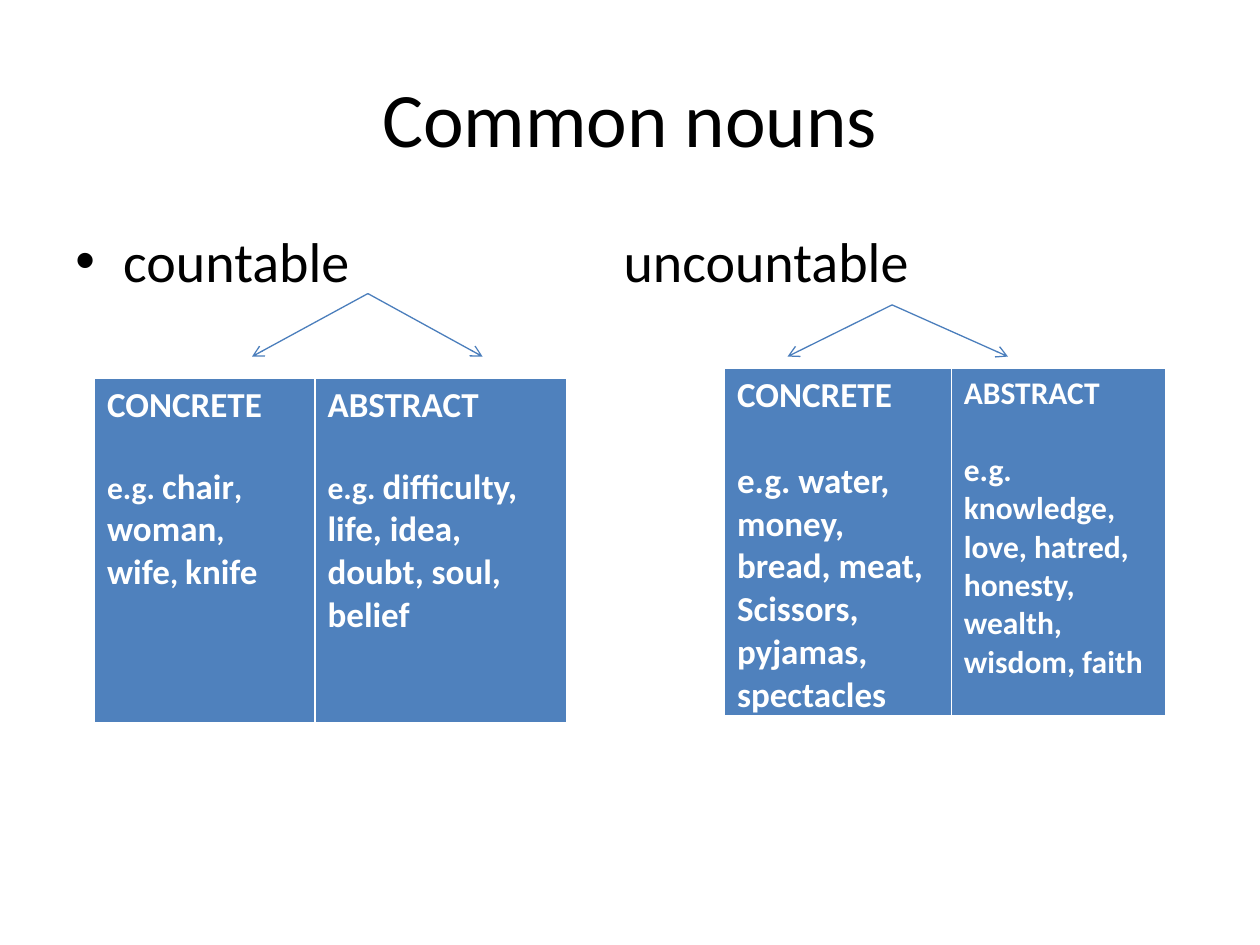
from dataclasses import dataclass

from lxml import etree
from pptx import Presentation
from pptx import util as u
from pptx.dml.color import RGBColor
from pptx.enum import shapes, text
from pptx.oxml.ns import qn


@dataclass(frozen=True)
class Theme:
    font: str = "Calibri"
    ink: str = "000000"
    paper: str = "FFFFFF"
    cell: str = "4F81BD"
    arrow: str = "4B7EBC"
    title: int = 44
    body: int = 32
    large: int = 20
    small: int = 18


THEME = Theme()


def write(para, content, *, size, color, bold=False, align=None, before=0):
    para.alignment = align
    para.space_before = u.Pt(before)
    span = para.add_run()
    span.text = content
    span.font.name = THEME.font
    span.font.size = u.Pt(size)
    span.font.bold = bold
    span.font.color.rgb = RGBColor.from_string(color)


class Page:
    def __init__(self, deck, theme):
        self.theme = theme
        self.slide = deck.slides.add_slide(deck.slide_layouts[6])

    def text(self, content, place, *, size, align=None,
             anchor=text.MSO_ANCHOR.TOP, bullet=False):
        box = self.slide.shapes.add_textbox(*map(u.Inches, place))
        frame = box.text_frame
        frame.word_wrap = True
        frame.vertical_anchor = anchor
        para = frame.paragraphs[0]
        write(para, content, size=size, color=self.theme.ink, align=align)
        if bullet:
            props = para._p.get_or_add_pPr()
            props.set("marL", str(u.Inches(0.38)))
            props.set("indent", str(u.Inches(-0.38)))
            etree.SubElement(props, qn("a:buFont"), typeface="Arial")
            etree.SubElement(props, qn("a:buChar"), char="•")

    def table(self, left, top, height, widths, cells):
        frame = self.slide.shapes.add_table(
            1, len(widths), *map(u.Inches, (left, top, sum(widths), height)))
        table = frame.table
        table.first_row = table.horz_banding = False
        table.rows[0].height = u.Inches(height)
        for index, (width, paragraphs) in enumerate(zip(widths, cells)):
            table.columns[index].width = u.Inches(width)
            self.fill_cell(table.cell(0, index), paragraphs)

    def fill_cell(self, cell, paragraphs):
        props = cell._tc.get_or_add_tcPr()
        for side, weight in (("L", 1), ("R", 1), ("T", 1), ("B", 3)):
            line = etree.SubElement(props, qn(f"a:ln{side}"), w=str(u.Pt(weight)))
            paint = etree.SubElement(line, qn("a:solidFill"))
            etree.SubElement(paint, qn("a:srgbClr"), val=self.theme.paper)
        cell.fill.solid()
        cell.fill.fore_color.rgb = RGBColor.from_string(self.theme.cell)
        frame = cell.text_frame
        for index, (before, spans) in enumerate(paragraphs):
            para = frame.add_paragraph() if index else frame.paragraphs[0]
            for content, size in spans:
                write(para, content, size=size, color=self.theme.paper,
                      bold=True, before=before)

    def arrow(self, start, end):
        line = self.slide.shapes.add_connector(
            shapes.MSO_CONNECTOR.STRAIGHT, *map(u.Inches, (*start, *end)))
        line.line.width = u.Pt(0.75)
        line.line.color.rgb = RGBColor.from_string(self.theme.arrow)
        etree.SubElement(line.line._get_or_add_ln(), qn("a:tailEnd"), type="arrow")
        etree.SubElement(line._element.spPr, qn("a:effectLst"))

    def fork(self, start, ends):
        for end in ends:
            self.arrow(start, end)


def main():
    deck = Presentation()
    deck.slide_width, deck.slide_height = u.Inches(10), u.Inches(7.5)
    page = Page(deck, THEME)
    large, small = THEME.large, THEME.small
    small_gap, large_gap = 22, 24.4

    page.text("Common nouns", (0.5, 0.3, 9, 1.25), size=THEME.title,
              align=text.PP_ALIGN.CENTER, anchor=text.MSO_ANCHOR.MIDDLE)
    page.text("countable", (0.5, 1.75, 4.3, 0.65), size=THEME.body, bullet=True)
    page.text("uncountable", (4.85, 1.75, 4.65, 0.65), size=THEME.body)

    countable = [("e.g. ", small), ("chair", large)]
    for noun in ("woman", "wife", "knife"):
        countable += [(", ", small), (noun, large)]
    page.table(0.75, 3, 2.75, (1.75, 2), [
        [(0, [("CONCRETE", large)]), (small_gap, countable)],
        [(0, [("ABSTRACT", large)]),
         (small_gap, [("e.g. ", small),
                      ("difficulty, life, idea, doubt, soul, belief", large)])],
    ])
    page.fork((2.92, 2.33), [(3.83, 2.83), (2, 2.83)])

    page.table(5.75, 2.92, 2.77, (1.8, 1.7), [
        [(0, [("CONCRETE", large)]),
         (large_gap, [("e.g. water, money, bread, meat,", large)]),
         (0, [("Scissors, pyjamas, spectacles", large)])],
        [(0, [("ABSTRACT", small)]),
         (small_gap, [("e.g. knowledge, love, hatred, honesty, "
                       "wealth, wisdom, faith", small)])],
    ])
    page.fork((7.08, 2.42), [(8, 2.83), (6.25, 2.83)])

    deck.save("out.pptx")


if __name__ == "__main__":
    main()
